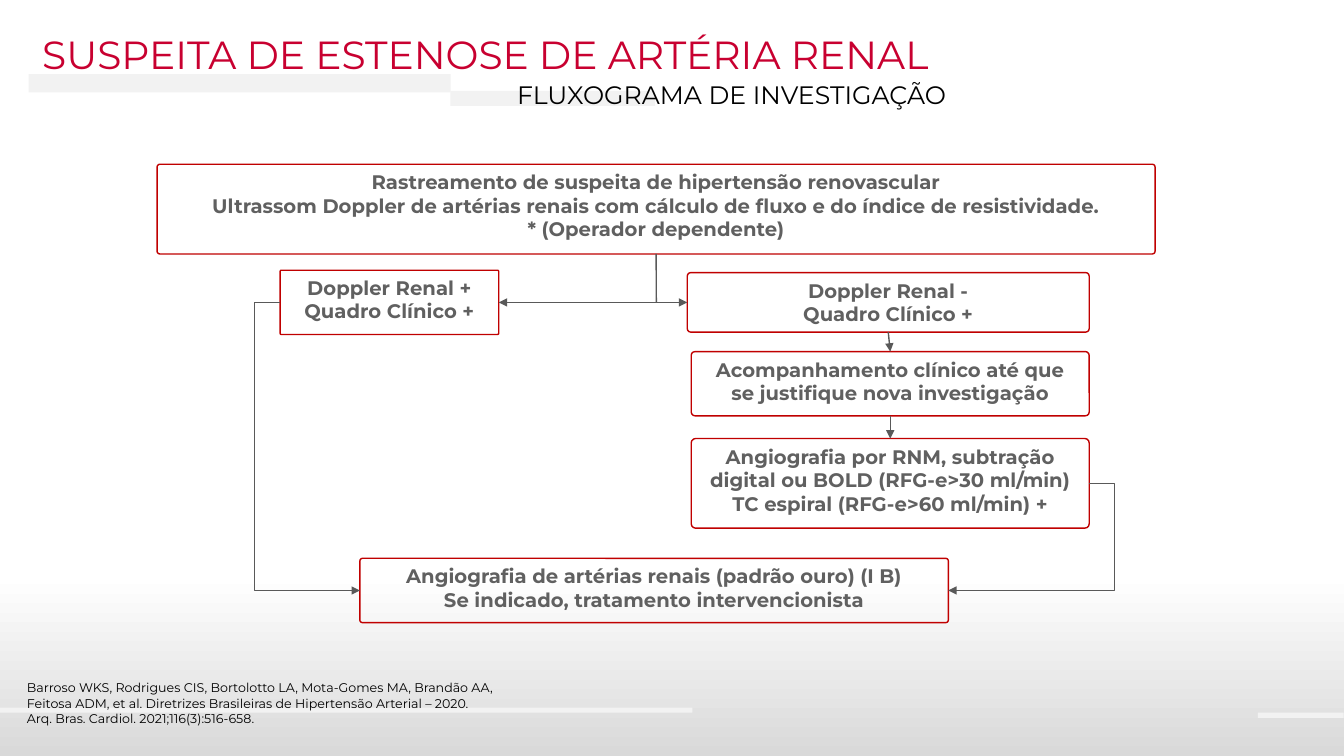
import pptx
import pptx.util
import pptx.dml.color
import pptx.enum.shapes
import pptx.enum.text
import pptx.oxml
import pptx.oxml.ns
from pptx.util import Cm

COLORS = {
    "title": "C80030",
    "border": "C00000",
    "step": "606060",
    "arrow": "595959",
    "text": "000000",
    "bar": "F2F2F2",
    "paper": "FFFFFF",
    "shade": "D9D9D9",
}
FONT = "Montserrat"
TOP, LEFT, BOTTOM, RIGHT = range(4)

# Left, top, width, height in centimetres
BARS = [
    (0.72, 1.87, 10.64, 0.46),
    (11.35, 2.29, 5.16, 0.38),
    (0, 17.83, 17.45, 0.13),
    (31.7, 17.96, 2.16, 0.13),
]


def color(name):
    return pptx.dml.color.RGBColor.from_string(COLORS[name])


def write(shape, lines, size, color_name, bold=False, align=pptx.enum.text.PP_ALIGN.LEFT):
    frame = shape.text_frame
    frame.text = "\n".join(lines)
    frame.word_wrap = True
    frame.auto_size = pptx.enum.text.MSO_AUTO_SIZE.NONE
    frame.vertical_anchor = pptx.enum.text.MSO_ANCHOR.TOP
    for paragraph in frame.paragraphs:
        paragraph.alignment = align
        paragraph.font.name = FONT
        paragraph.font.size = pptx.util.Pt(size)
        paragraph.font.bold = bold
        paragraph.font.color.rgb = color(color_name)


def shade_background(slide):
    fill = slide.background.fill
    fill.gradient()
    fill.gradient_angle = 270
    for stop, position, name in zip(fill.gradient_stops, (0.76, 1), ("paper", "shade")):
        stop.position = position
        stop.color.rgb = color(name)


def add_bar(slide, box):
    bar = slide.shapes.add_shape(
        pptx.enum.shapes.MSO_SHAPE.RECTANGLE, *map(Cm, box))
    bar.shadow.inherit = False
    bar.fill.solid()
    bar.fill.fore_color.rgb = color("bar")
    bar.line.fill.background()


def place_title(slide, text):
    title = slide.shapes.title
    title.left, title.top, title.width, title.height = map(Cm, (0.81, 0.64, 29.11, 1.45))
    write(title, [text], 28, "title")
    # Bring the title in front of the decorative bars
    title._element.getparent().append(title._element)


def add_text(slide, box, lines, size):
    write(slide.shapes.add_textbox(*map(Cm, box)), lines, size, "text")


def add_step(slide, box, rounding, *lines):
    step = slide.shapes.add_shape(
        pptx.enum.shapes.MSO_SHAPE.ROUNDED_RECTANGLE, *map(Cm, box))
    step.adjustments[0] = rounding
    step.shadow.inherit = False
    step.fill.background()
    step.line.color.rgb = color("border")
    step.line.width = pptx.util.Pt(1)
    write(step, lines, 14, "step", True, pptx.enum.text.PP_ALIGN.CENTER)
    return step


def add_link(slide, start=None, end=None, start_at=(0, 0), end_at=(0, 0),
             detour=None, arrow=True):
    """Link (step, side) pairs or points in cm; detour is how far an elbow juts out."""
    kinds = pptx.enum.shapes.MSO_CONNECTOR
    link = slide.shapes.add_connector(
        kinds.STRAIGHT if detour is None else kinds.ELBOW,
        *map(Cm, start_at), *map(Cm, end_at))
    if start:
        link.begin_connect(*start)
    if end:
        link.end_connect(*end)
    link.line.color.rgb = color("arrow")
    link.line.width = pptx.util.Pt(1)

    qn = pptx.oxml.ns.qn
    properties = link._element.spPr
    if detour is not None:
        guides = properties.find(qn("a:prstGeom")).get_or_add_avLst()
        guide = guides.makeelement(qn("a:gd"), {
            "name": "adj1",
            "fmla": f"val {round(-100000 * Cm(detour) / link.width)}",
        })
        guides.append(guide)
    if arrow:
        line = link.line._get_or_add_ln()
        line.append(line.makeelement(qn("a:tailEnd"), {"type": "triangle"}))
    properties.append(properties.makeelement(qn("a:effectLst"), {}))


def add_flowchart(slide):
    screening = add_step(
        slide, (3.96, 4.14, 25.15, 2.26), 0.03,
        "Rastreamento de suspeita de hipertensão renovascular",
        "Ultrassom Doppler de artérias renais com cálculo de fluxo e do índice de resistividade.",
        "* (Operador dependente)")
    positive = add_step(slide, (7.06, 6.81, 5.51, 1.62), 0.02,
                        "Doppler Renal +", "Quadro Clínico +")
    negative = add_step(slide, (17.32, 6.87, 10.13, 1.5), 0.06,
                        "Doppler Renal -", "Quadro Clínico +")
    gold_standard = add_step(
        slide, (9.07, 14.07, 14.83, 1.62), 0.04,
        "Angiografia de artérias renais (padrão ouro) (I B)",
        "Se indicado, tratamento intervencionista")
    follow_up = add_step(
        slide, (17.42, 8.86, 10.03, 1.62), 0.06,
        "Acompanhamento clínico até que se justifique nova investigação")
    imaging = add_step(
        slide, (17.42, 11.05, 10.03, 2.26), 0.05,
        "Angiografia por RNM, subtração digital ou BOLD (RFG-e>30 ml/min)",
        "TC espiral (RFG-e>60 ml/min) +")

    fork = (16.54, 7.62)
    add_link(slide, start=(screening, BOTTOM), end_at=fork, arrow=False)
    add_link(slide, start_at=fork, end=(positive, RIGHT))
    add_link(slide, start_at=fork, end=(negative, LEFT))
    add_link(slide, (negative, BOTTOM), (follow_up, TOP))
    add_link(slide, (follow_up, BOTTOM), (imaging, TOP))
    add_link(slide, (imaging, RIGHT), (gold_standard, RIGHT), detour=0.64)
    add_link(slide, (positive, LEFT), (gold_standard, LEFT), detour=0.64)


def main():
    deck = pptx.Presentation()
    deck.slide_width, deck.slide_height = Cm(33.87), Cm(19.05)
    slide = deck.slides.add_slide(deck.slide_layouts.get_by_name("Title Only"))

    shade_background(slide)
    for box in BARS:
        add_bar(slide, box)
    place_title(slide, "SUSPEITA DE ESTENOSE DE ARTÉRIA RENAL")
    add_text(slide, (12.78, 1.88, 19.71, 1.02), ["FLUXOGRAMA DE INVESTIGAÇÃO"], 18)
    add_flowchart(slide)
    add_text(slide, (0.43, 17.02, 15.85, 1.42), [
        "Barroso WKS, Rodrigues CIS, Bortolotto LA, Mota-Gomes MA, Brandão AA,",
        "Feitosa ADM, et al. Diretrizes Brasileiras de Hipertensão Arterial – 2020.",
        "Arq. Bras. Cardiol. 2021;116(3):516-658.",
    ], 9)
    deck.save("out.pptx")


if __name__ == "__main__":
    main()
